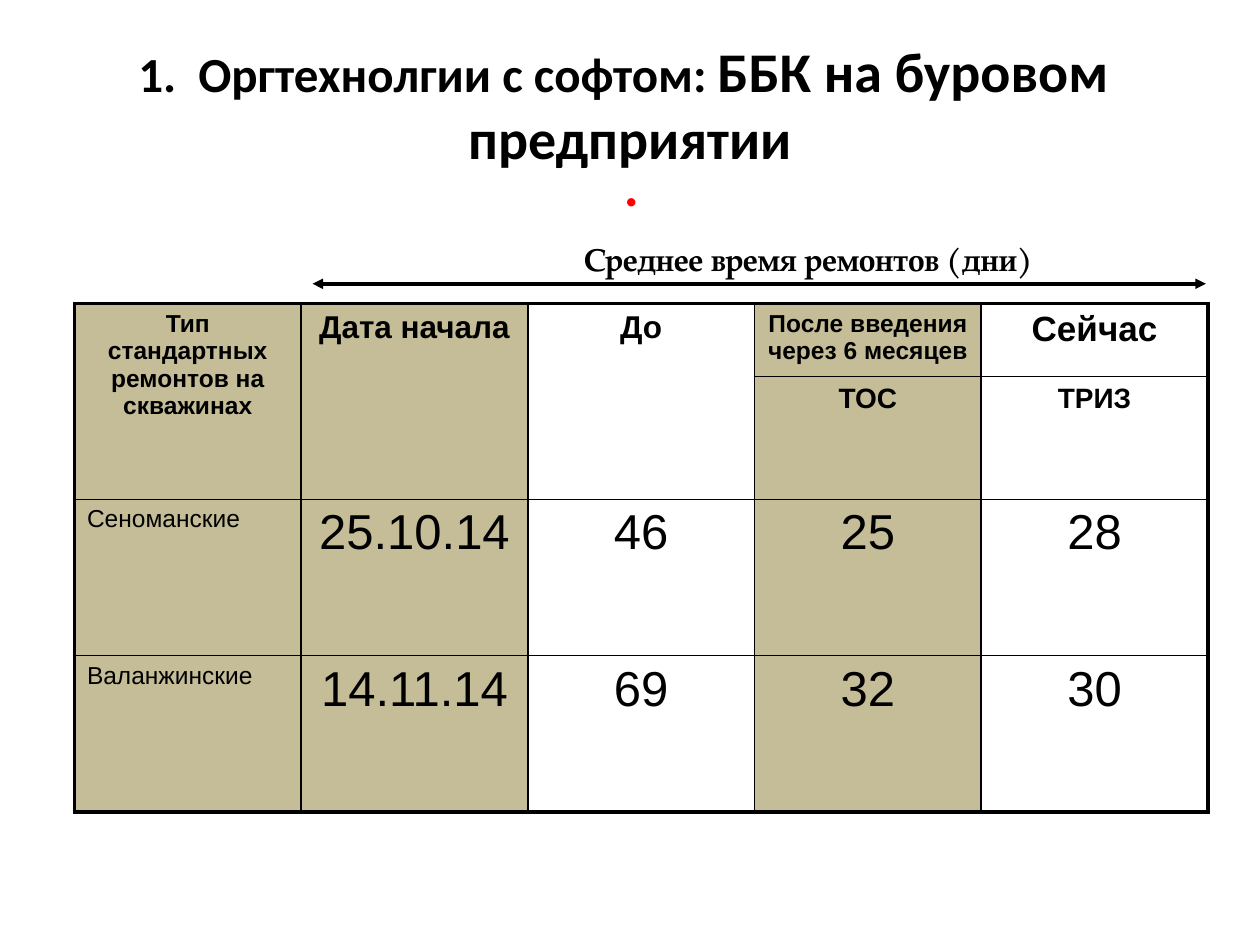
from typing import NamedTuple

from lxml.etree import SubElement
from pptx import Presentation
from pptx.dml.color import RGBColor
from pptx.enum.shapes import MSO_CONNECTOR
from pptx.enum.text import MSO_ANCHOR, PP_ALIGN
from pptx.oxml.ns import qn
from pptx.util import Cm, Pt

LEFT, CENTER = PP_ALIGN.LEFT, PP_ALIGN.CENTER
MIDDLE = MSO_ANCHOR.MIDDLE
STRAIGHT = MSO_CONNECTOR.STRAIGHT
COLORS = {"ink": "000000", "dot": "FF0000", "tan": "C4BD97", "white": "FFFFFF"}
FILLS = ["tan", "tan", "white", "tan", "white"]
HEIGHTS = [1.47, 1.4, 3.15, 3.15]
WIDTH = 4.57
THICK, THIN = 2.25, 1


class Item(NamedTuple):
    text: str
    size: int
    bold: bool = False
    align: PP_ALIGN = CENTER


ROWS = [
    [Item("Тип стандартных ремонтов на скважинах", 14, True),
     Item("Дата начала", 18, True), Item("До", 18, True),
     Item("После введения через 6 месяцев", 14, True), Item("Сейчас", 20, True)],
    [None, None, None, Item("ТОС", 16, True), Item("ТРИЗ", 16, True)],
] + [
    [Item(name, 14, align=LEFT)] + [Item(value, 28) for value in values]
    for name, *values in [
        ("Сеноманские", "25.10.14", "46", "25", "28"),
        ("Валанжинские", "14.11.14", "69", "32", "30"),
    ]
]


def color(name: str) -> RGBColor:
    return RGBColor.from_string(COLORS[name])


def style(font, face: str, size: int, bold: bool = True, ink: str = "ink") -> None:
    font.name, font.size, font.bold = face, Pt(size), bold
    font.color.rgb = color(ink)


def add_title(slide) -> None:
    title = slide.shapes.title
    title.left, title.top, title.width, title.height = map(Cm, (1.3, 2.51, 22.86, 2.39))
    title.text_frame.vertical_anchor = MIDDLE
    line = title.text_frame.paragraphs[0]
    line.text, line.alignment = ".", CENTER
    style(line.font, "Calibri", 32, ink="dot")


def add_border(cell, side: str, width: float) -> None:
    edge = SubElement(cell._tc.get_or_add_tcPr(), qn(f"a:ln{side}"), w=str(Pt(width)))
    fill = SubElement(edge, qn("a:solidFill"))
    SubElement(fill, qn("a:srgbClr"), val=COLORS["ink"])


def add_grid(slide) -> None:
    count = len(FILLS)
    grid = slide.shapes.add_table(
        len(ROWS), count, Cm(1.5), Cm(6.12), Cm(WIDTH * count), Cm(sum(HEIGHTS))
    ).table
    grid.first_row = grid.horz_banding = False
    for col in grid.columns:
        col.width = Cm(WIDTH)
    for row, height in zip(grid.rows, HEIGHTS):
        row.height = Cm(height)
    for r, items in enumerate(ROWS):
        for c, item in enumerate(items):
            cell = grid.cell(r, c)
            outer = {"L": c == 0, "R": c == count - 1,
                     "T": r == 0, "B": r == len(ROWS) - 1}
            for side, edge in outer.items():
                add_border(cell, side, THICK if edge else THIN)
            cell.fill.solid()
            cell.fill.fore_color.rgb = color(FILLS[c])
            if item is None:
                grid.cell(r - 1, c).merge(cell)
                continue
            line = cell.text_frame.paragraphs[0]
            line.text, line.alignment = item.text, item.align
            style(line.font, "Arial", item.size, item.bold)


def add_heading(slide) -> None:
    frame = slide.shapes.add_textbox(0, 0, Cm(25.4), Cm(4.17)).text_frame
    frame.word_wrap, frame.vertical_anchor = False, MIDDLE
    lines = [
        [("1.  Оргтехнолгии с софтом: ", 28), ("ББК на буровом ", 32)],
        [("предприятии", 32)],
    ]
    for i, parts in enumerate(lines):
        line = frame.add_paragraph() if i else frame.paragraphs[0]
        line.alignment = CENTER
        for text, size in parts:
            run = line.add_run()
            run.text = text
            style(run.font, "Calibri", size)


def add_caption(slide) -> None:
    frame = slide.shapes.add_textbox(Cm(7.19), Cm(4.72), Cm(18.21), Cm(1.02)).text_frame
    frame.word_wrap = True
    line = frame.paragraphs[0]
    line.text, line.alignment = "Среднее время ремонтов (дни)", CENTER
    style(line.font, "TeX Gyre Pagella", 18)


def add_arrow(slide) -> None:
    arrow = slide.shapes.add_connector(STRAIGHT, Cm(6.3), Cm(5.72), Cm(24.31), Cm(5.72))
    arrow.line.color.rgb = color("ink")
    arrow.line.width = Pt(2)
    props = arrow._element.spPr
    for end in ("headEnd", "tailEnd"):
        SubElement(props.find(qn("a:ln")), qn(f"a:{end}"), type="triangle")
    SubElement(props, qn("a:effectLst"))


def main() -> None:
    deck = Presentation()
    deck.slide_width, deck.slide_height = Cm(25.4), Cm(19.05)
    slide = deck.slides.add_slide(deck.slide_layouts[5])
    for draw in (add_title, add_grid, add_heading, add_caption, add_arrow):
        draw(slide)
    deck.save("out.pptx")


if __name__ == "__main__":
    main()
